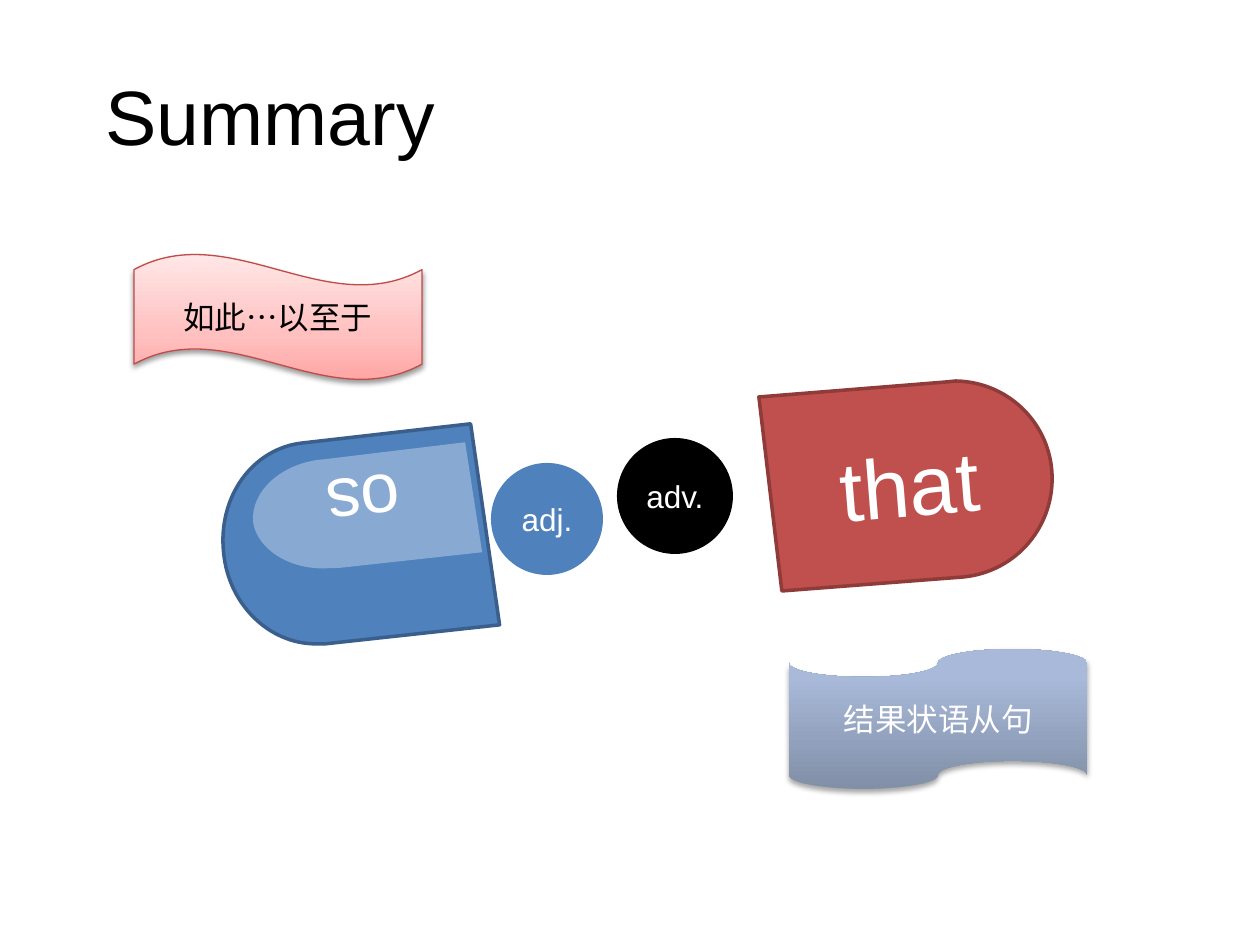
from math import cos, radians, sin

from lxml.etree import SubElement
from pptx import Presentation
from pptx.dml.color import RGBColor
from pptx.enum.shapes import MSO_SHAPE as SHAPE
from pptx.enum.text import MSO_ANCHOR as ANCHOR, PP_ALIGN as ALIGN
from pptx.oxml.ns import qn
from pptx.util import Pt

PX = 914400 / 126


def px(*values):
    """Turn px lengths into EMU."""
    return [round(v * PX) for v in values]


def paint(color, value):
    """Set a colour format from a hex string."""
    color.rgb = RGBColor.from_string(value)


def fill_solid(sp, value, alpha=None):
    """Fill a shape with one colour, optionally see-through."""
    sp.fill.solid()
    paint(sp.fill.fore_color, value)
    if alpha is not None:
        clr = sp._element.spPr.find(qn("a:solidFill"))[0]
        SubElement(clr, qn("a:alpha"), val=str(alpha * 1000))


def fill_gradient(sp, stops):
    """Fill a shape with a gradient running from bottom to top."""
    sp.fill.gradient()
    sp.fill.gradient_angle = 90
    gs_list = sp._element.spPr.find(qn("a:gradFill")).find(qn("a:gsLst"))
    for gs in list(gs_list):
        gs_list.remove(gs)
    for pos, value in stops:
        gs = SubElement(gs_list, qn("a:gs"), pos=str(pos * 1000))
        SubElement(gs, qn("a:srgbClr"), val=value)


def outline(sp, value=None, width=0):
    """Draw the outline of a shape, or none, and clear its shadow."""
    sp.shadow.inherit = False
    if value:
        paint(sp.line.color, value)
        sp.line.width = Pt(width)
    else:
        sp.line.fill.background()


def drop_shadow(sp, alpha, dist):
    """Cast a soft black shadow straight down."""
    effects = sp._element.spPr.find(qn("a:effectLst"))
    shadow = SubElement(effects, qn("a:outerShdw"), blurRad=str(Pt(3.1)),
                        dist=str(Pt(dist)), dir="5400000", rotWithShape="0")
    clr = SubElement(shadow, qn("a:srgbClr"), val="000000")
    SubElement(clr, qn("a:alpha"), val=str(alpha * 1000))


def write(sp, text, size, value="FFFFFF", align=ALIGN.CENTER, wrap=True):
    """Write one vertically centred line in a shape."""
    tf = sp.text_frame
    tf.word_wrap = wrap
    tf.vertical_anchor = ANCHOR.MIDDLE
    p = tf.paragraphs[0]
    p.text = text
    p.alignment = align
    p.font.size = Pt(size)
    p.font.name = "Arial"
    paint(p.font.color, value)


def bend(sp, count):
    """Join each leading triple of path lines into a cubic curve."""
    lines = list(sp._element.iter(qn("a:lnTo")))
    for i in range(0, 3 * count, 3):
        curve = lines[i].makeelement(qn("a:cubicBezTo"))
        lines[i].addprevious(curve)
        for line in lines[i:i + 3]:
            curve.append(line[0])
            line.getparent().remove(line)


def half_capsule(slide, center, angle, start, curves, corners):
    """Draw a tilted half capsule from points relative to its centre."""
    points = [start, *(pt for curve in curves for pt in curve), *corners]
    c, s = cos(radians(-angle)), sin(radians(-angle))
    cx, cy = center
    local = [px(cx + x * c - y * s, cy + x * s + y * c) for x, y in points]
    builder = slide.shapes.build_freeform(*local[0], scale=1.0)
    builder.add_line_segments(local[1:], close=True)
    sp = builder.convert_to_shape()
    bend(sp, len(curves))
    sp.rotation = angle
    return sp


def title(slide, box):
    """Place the slide title."""
    sp = slide.shapes.add_textbox(*px(*box))
    write(sp, "Summary", 44, "000000", ALIGN.LEFT, wrap=False)


def that_half(slide, center):
    """Place the red right half of the capsule."""
    sp = half_capsule(slide, center, 355.4, (47, -101),
                      [[(98, -100), (139, -61), (143, -11)],
                       [(147, 43), (108, 90), (54, 95)]],
                      [(-127, 109), (-150, -85), (37, -100)])
    fill_solid(sp, "C0504D")
    outline(sp, "8E3B39", 2)
    write(sp, "that", 48)


def so_half(slide, center):
    """Place the blue left half of the capsule, turned over, with its highlight."""
    sp = half_capsule(slide, center, 173.8, (-40, 105),
                      [[(-86, 105), (-127, 66), (-132, 14)],
                       [(-138, -42), (-103, -91), (-52, -96)]],
                      [(115, -115), (144, 86), (-30, 105)])
    fill_solid(sp, "4F81BD")
    outline(sp, "3A5F8C", 2)

    cx, cy = center
    shine = half_capsule(slide, (cx + 8, cy - 29), 173.8, (-38, 59),
                         [[(-75, 61), (-108, 40), (-112, 13)],
                          [(-115, -18), (-83, -47), (-41, -50)]],
                         [(100, -67), (117, 43), (-29, 59)])
    fill_solid(shine, "FFFFFF", 32)
    outline(shine)
    write(shine, "os", 40)
    tf = shine.text_frame
    tf.margin_top, tf.margin_bottom = px(12, 4)


def ball(slide, box, text, value):
    """Place a round word-class label."""
    sp = slide.shapes.add_shape(SHAPE.OVAL, *px(*box))
    fill_solid(sp, value)
    outline(sp)
    write(sp, text, 18, wrap=False)


def banner(slide, box, shape, text, value, stops, shadow, line=()):
    """Place a waving banner with a gradient and a shadow."""
    sp = slide.shapes.add_shape(shape, *px(*box))
    fill_gradient(sp, stops)
    outline(sp, *line)
    drop_shadow(sp, *shadow)
    write(sp, text, 18, value)


def main():
    """Build and save the slide."""
    prs = Presentation()
    prs.slide_width, prs.slide_height = px(1260, 945)
    slide = prs.slides.add_slide(prs.slide_layouts[6])
    title(slide, (93, 33, 1070, 164))
    that_half(slide, (909, 482))
    so_half(slide, (356, 538))
    ball(slide, (617, 438, 116, 116), "adv.", "000000")
    ball(slide, (491, 463, 112, 112), "adj.", "4F81BD")
    banner(slide, (134, 254, 288, 126), SHAPE.WAVE, "如此…以至于", "000000",
           [(0, "FFA6A5"), (35, "FFC0BF"), (100, "FFE7E7")], (38, 1.6), ("BF4C48", 0.75))
    banner(slide, (789, 649, 298, 140), SHAPE.FLOWCHART_PUNCHED_TAPE, "结果状语从句", "FFFFFF",
           [(0, "818FA7"), (80, "A8B9D9"), (100, "A8BADB")], (35, 1.8))
    prs.save("out.pptx")


if __name__ == "__main__":
    main()
